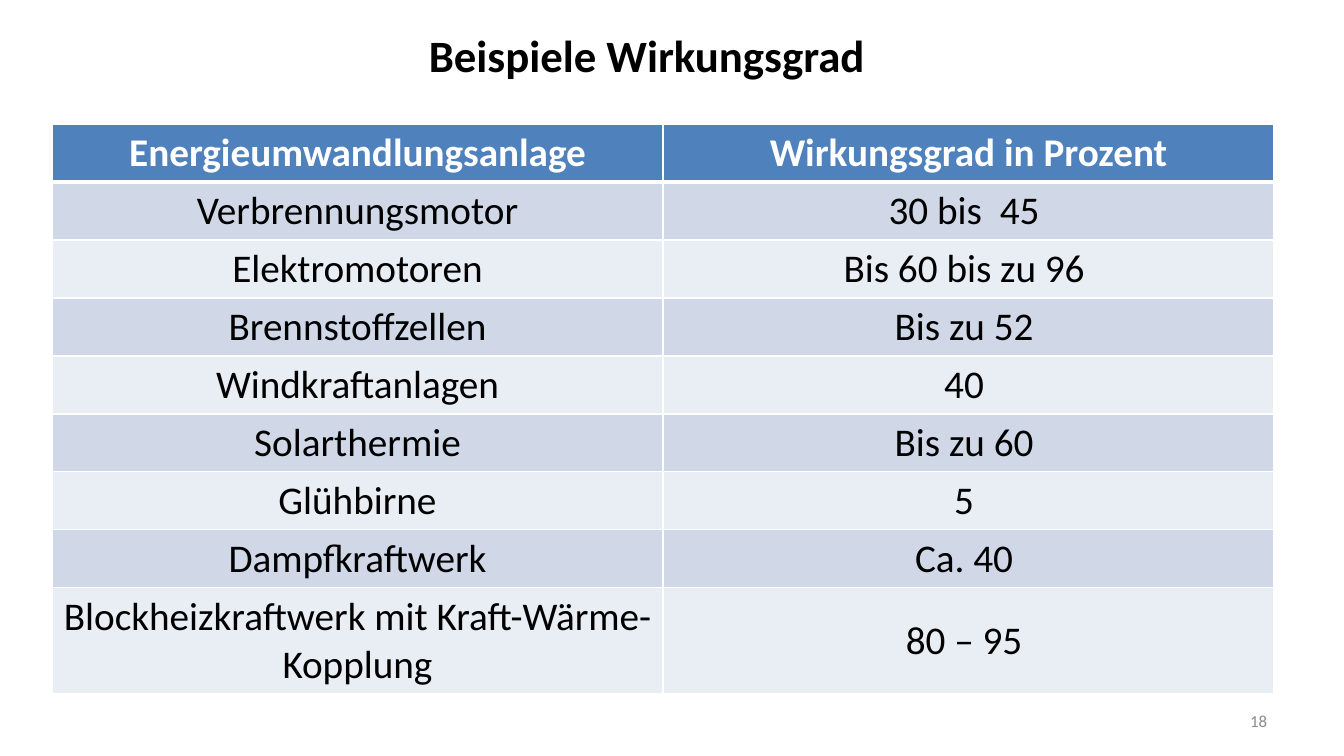
"""Build a slide with a table of energy conversion efficiencies."""
from lxml.etree import SubElement
from pptx import Presentation
from pptx.dml.color import RGBColor
from pptx.enum.text import MSO_ANCHOR as Anchor, MSO_AUTO_SIZE as AutoSize, PP_ALIGN as Align
from pptx.oxml.ns import qn
from pptx.util import Pt

PX = 914400 / 100.8
BLACK = RGBColor(0x00, 0x00, 0x00)
WHITE = RGBColor(0xFF, 0xFF, 0xFF)
GREY = RGBColor(0x8C, 0x8C, 0x8C)
HEADER_BLUE = RGBColor(0x4F, 0x81, 0xBD)
BANDS = [RGBColor(0xE9, 0xED, 0xF4), RGBColor(0xD0, 0xD8, 0xE8)]
ROWS = [
    ("Energieumwandlungsanlage", "Wirkungsgrad in Prozent"),
    ("Verbrennungsmotor", "30 bis  45 "),
    ("Elektromotoren", "Bis 60 bis zu 96 "),
    ("Brennstoffzellen", "Bis zu 52 "),
    ("Windkraftanlagen", "40 "),
    ("Solarthermie", "Bis zu 60 "),
    ("Glühbirne", "5 "),
    ("Dampfkraftwerk", "Ca. 40 "),
    ("Blockheizkraftwerk mit Kraft-Wärme-Kopplung", "80 – 95 "),
]


def px(*lengths):
    """Turn pixel lengths into EMU."""
    return [round(length * PX) for length in lengths]


def write(frame, text, size, color, align, bold=False):
    """Put one formatted paragraph into a text frame."""
    frame.text = text
    para = frame.paragraphs[0]
    para.alignment = align
    para.font.name = "Calibri"
    para.font.size = Pt(size)
    para.font.bold = bold
    para.font.color.rgb = color


deck = Presentation()
deck.slide_width, deck.slide_height = px(1344, 756)
page = deck.slides.add_slide(deck.slide_layouts[5])

title = page.shapes.title
title.left, title.top, title.width, title.height = px(170, 36, 954, 38)
title.text_frame.auto_size = AutoSize.NONE
title.text_frame.vertical_anchor = Anchor.MIDDLE
write(title.text_frame, "Beispiele Wirkungsgrad", 32, BLACK, Align.CENTER, True)

number_box = page.shapes.add_textbox(*px(964, 701, 313, 40))
number_box.text_frame.word_wrap = True
number_box.text_frame.vertical_anchor = Anchor.MIDDLE
write(number_box.text_frame, "18", 12, GREY, Align.RIGHT)

table = page.shapes.add_table(len(ROWS), 2, *px(52, 124, 1222, 570)).table
for column in table.columns:
    column.width = px(611)[0]
for row_index, texts in enumerate(ROWS):
    header = row_index == 0
    table.rows[row_index].height = px(106 if row_index == len(ROWS) - 1 else 58)[0]
    for column_index, text in enumerate(texts):
        cell = table.cell(row_index, column_index)
        cell.vertical_anchor = Anchor.MIDDLE
        write(cell.text_frame, text, 28, WHITE if header else BLACK, Align.CENTER, header)
        properties = cell._tc.get_or_add_tcPr()
        for side in ("L", "R", "T", "B"):
            thick = (header and side == "B") or (row_index == 1 and side == "T")
            line = SubElement(properties, qn(f"a:ln{side}"), w=str(Pt(3 if thick else 1)))
            SubElement(SubElement(line, qn("a:solidFill")), qn("a:srgbClr"), val=str(WHITE))
        cell.fill.solid()
        cell.fill.fore_color.rgb = HEADER_BLUE if header else BANDS[row_index % 2]

deck.save("out.pptx")
